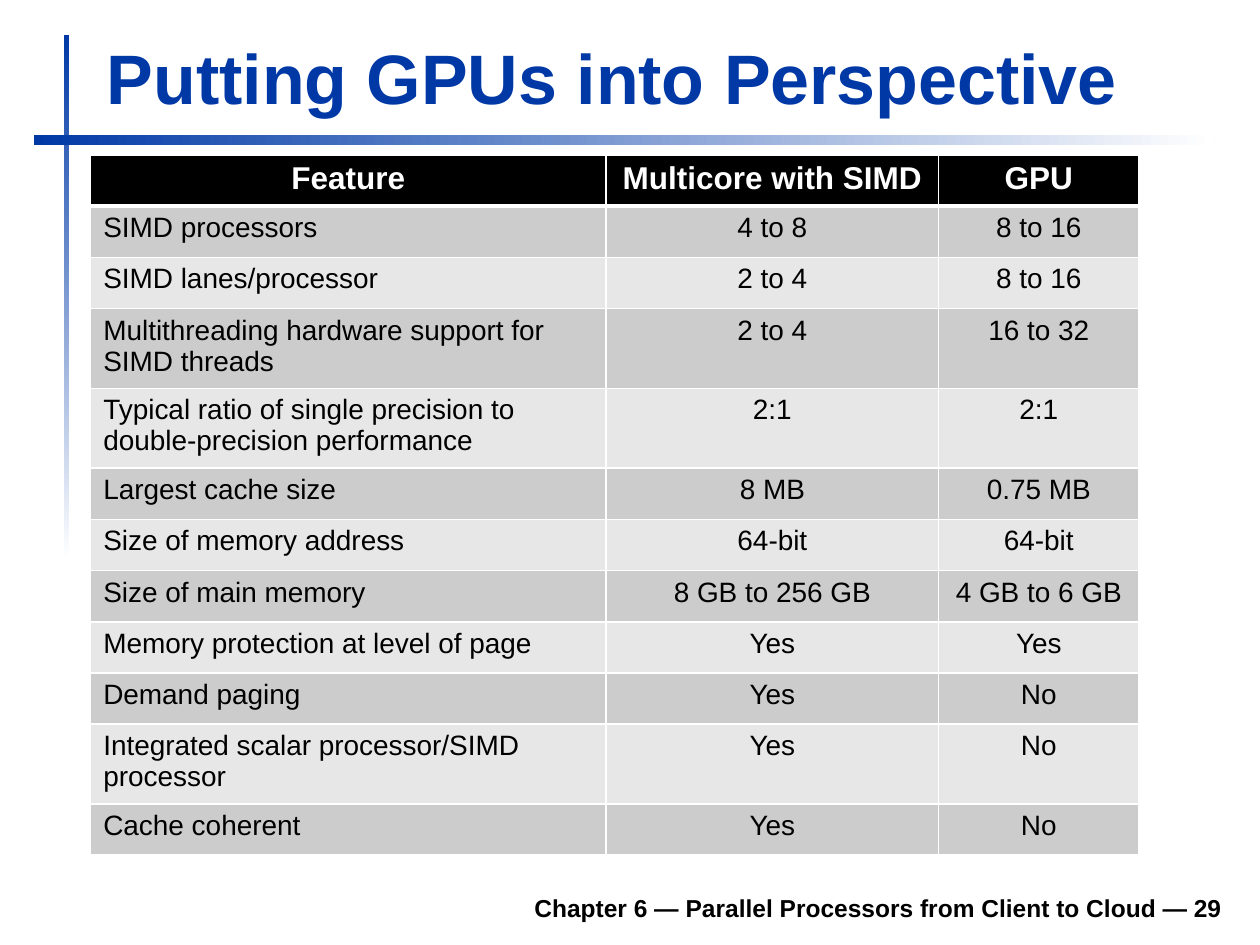
from dataclasses import dataclass

from lxml import etree
from pptx import Presentation
from pptx.dml.color import RGBColor
from pptx.enum import shapes, text
from pptx.oxml import ns
from pptx.util import Inches, Pt


@dataclass(frozen=True)
class Theme:
    font: str = "Arial"
    blue: str = "0039A6"
    black: str = "000000"
    white: str = "FFFFFF"
    bands: tuple = ("CCCCCC", "E7E7E7")
    title: int = 40
    header: int = 18
    body: int = 16
    footer: int = 14
    border: int = 1
    header_rule: int = 3


@dataclass(frozen=True)
class Box:
    left: float
    top: float
    width: float
    height: float

    def lengths(self) -> list:
        return [Inches(v) for v in (self.left, self.top, self.width, self.height)]


@dataclass(frozen=True)
class Bar:
    box: Box
    angle: int


@dataclass(frozen=True)
class Label:
    box: Box
    words: str
    size: int
    color: str
    align: text.PP_ALIGN


@dataclass(frozen=True)
class Feature:
    name: str
    multicore: str
    gpu: str
    lines: int = 1


THEME = Theme()
LEFT, CENTER, RIGHT = text.PP_ALIGN.LEFT, text.PP_ALIGN.CENTER, text.PP_ALIGN.RIGHT

# Gradient angles run counter-clockwise, so 270 fades downwards.
BARS = [
    Bar(Box(0.51, 0.28, 0.04, 4.17), 270),
    Bar(Box(0.27, 1.07, 9.37, 0.08), 0),
]
LABELS = [
    Label(Box(0.75, 0.22, 9.03, 0.77), "Putting GPUs into Perspective",
          THEME.title, THEME.blue, LEFT),
    Label(Box(1.85, 6.98, 7.95, 0.39),
          "Chapter 6 — Parallel Processors from Client to Cloud — 29",
          THEME.footer, THEME.black, RIGHT),
]
TABLE_BOX = Box(0.72, 1.23, 8.32, 5.55)
COLUMNS = (4.09, 2.64, 1.59)
TWO_LINE_ROW = 0.63
FEATURES = [
    Feature("Feature", "Multicore with SIMD", "GPU"),
    Feature("SIMD processors", "4 to 8", "8 to 16"),
    Feature("SIMD lanes/processor", "2 to 4", "8 to 16"),
    Feature("Multithreading hardware support for SIMD threads", "2 to 4", "16 to 32", 2),
    Feature("Typical ratio of single precision to double-precision performance",
            "2:1", "2:1", 2),
    Feature("Largest cache size", "8 MB", "0.75 MB"),
    Feature("Size of memory address", "64-bit", "64-bit"),
    Feature("Size of main memory", "8 GB to 256 GB", "4 GB to 6 GB"),
    Feature("Memory protection at level of page", "Yes", "Yes"),
    Feature("Demand paging", "Yes", "No"),
    Feature("Integrated scalar processor/SIMD processor", "Yes", "No", 2),
    Feature("Cache coherent", "Yes", "No"),
]


def write(tf, words: str, size: int, color: str, bold: bool, align) -> None:
    p = tf.paragraphs[0]
    p.alignment = align
    r = p.add_run()
    r.text = words
    for name, value in {"name": THEME.font, "size": Pt(size), "bold": bold}.items():
        setattr(r.font, name, value)
    r.font.color.rgb = RGBColor.from_string(color)


def draw_bar(s, bar: Bar) -> None:
    sp = s.shapes.add_shape(shapes.MSO_SHAPE.RECTANGLE, *bar.box.lengths())
    sp.shadow.inherit = False
    sp.line.fill.background()
    sp.fill.gradient()
    sp.fill.gradient_angle = bar.angle
    for stop, color, position in zip(sp.fill.gradient_stops,
                                     (THEME.blue, THEME.white), (0, 1)):
        stop.color.rgb = RGBColor.from_string(color)
        stop.position = position


def draw_label(s, label: Label) -> None:
    tf = s.shapes.add_textbox(*label.box.lengths()).text_frame
    tf.word_wrap = True
    tf.vertical_anchor = text.MSO_ANCHOR.BOTTOM
    write(tf, label.words, label.size, label.color, True, label.align)


def set_borders(cell, top: int, bottom: int) -> None:
    """Draw white cell borders; widths are in points."""
    tcPr = cell._tc.get_or_add_tcPr()
    widths = {"lnL": THEME.border, "lnR": THEME.border, "lnT": top, "lnB": bottom}
    for index, (tag, width) in enumerate(widths.items()):
        ln = etree.Element(ns.qn(f"a:{tag}"), w=str(Pt(width)))
        fill = etree.SubElement(ln, ns.qn("a:solidFill"))
        etree.SubElement(fill, ns.qn("a:srgbClr"), val=THEME.white)
        tcPr.insert(index, ln)


def draw_table(s, features: list[Feature]) -> None:
    table = s.shapes.add_table(len(features), len(COLUMNS), *TABLE_BOX.lengths()).table
    table.horz_banding = False
    for column, width in zip(table.columns, COLUMNS):
        column.width = Inches(width)

    tall = sum(f.lines == 2 for f in features)
    one_line_row = (TABLE_BOX.height - tall * TWO_LINE_ROW) / (len(features) - tall)
    for i, feature in enumerate(features):
        header = i == 0
        table.rows[i].height = Inches(TWO_LINE_ROW if feature.lines == 2 else one_line_row)
        background = THEME.black if header else THEME.bands[(i - 1) % 2]
        size = THEME.header if header else THEME.body
        color = THEME.white if header else THEME.black
        for j, words in enumerate((feature.name, feature.multicore, feature.gpu)):
            cell = table.cell(i, j)
            cell.fill.solid()
            cell.fill.fore_color.rgb = RGBColor.from_string(background)
            set_borders(cell,
                        top=THEME.header_rule if i == 1 else THEME.border,
                        bottom=THEME.header_rule if header else THEME.border)
            align = CENTER if header or j > 0 else LEFT
            write(cell.text_frame, words, size, color, header, align)


def main() -> None:
    prs = Presentation()
    prs.slide_width, prs.slide_height = Inches(10), Inches(7.5)
    s = prs.slides.add_slide(prs.slide_layouts[6])
    for bar in BARS:
        draw_bar(s, bar)
    for label in LABELS:
        draw_label(s, label)
    draw_table(s, FEATURES)
    prs.save("out.pptx")


if __name__ == "__main__":
    main()
